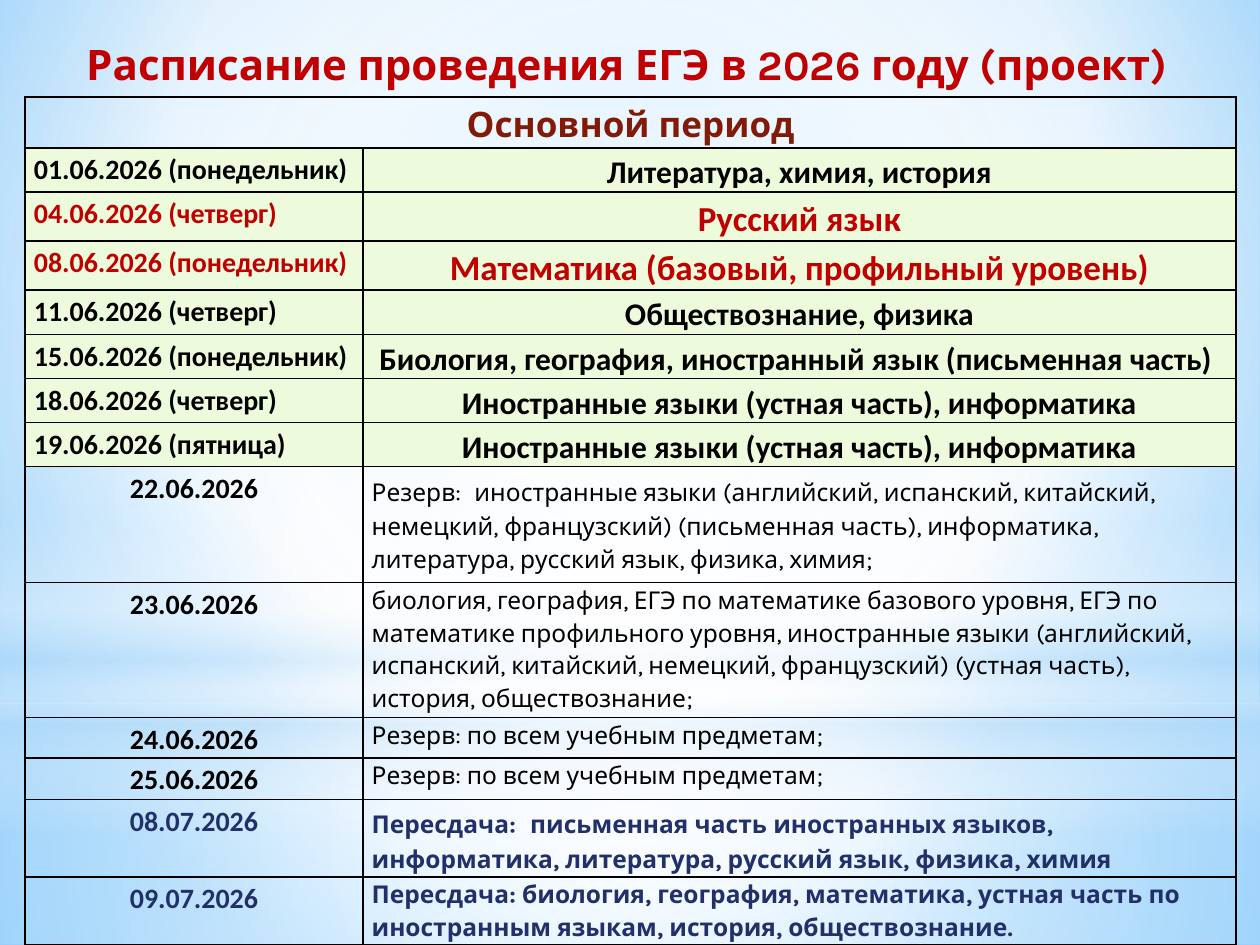
from lxml.etree import SubElement
from pptx import Presentation
from pptx.dml.color import RGBColor
from pptx.enum.shapes import MSO_SHAPE
from pptx.enum.text import MSO_ANCHOR, PP_ALIGN
from pptx.oxml import parse_xml
from pptx.oxml.ns import nsdecls, qn
from pptx.util import Inches, Pt

BLACK = RGBColor(0x00, 0x00, 0x00)
WHITE = RGBColor(0xFF, 0xFF, 0xFF)
RED = RGBColor(0xC0, 0x00, 0x00)
BROWN = RGBColor(0x82, 0x1A, 0x08)
NAVY = RGBColor(0x21, 0x30, 0x6A)
LIME = RGBColor(0xED, 0xFB, 0xDC)
HAZE = RGBColor(0xB4, 0xDC, 0xFA)
SKY = RGBColor(0x9E, 0xD5, 0xFF)
AZURE = RGBColor(0x5B, 0xB9, 0xFF)

RADIAL = '<a:path path="circle"><a:fillToRect l="{}000" t="{}000" r="{}000" b="{}000"/></a:path>'
CENTRED = RADIAL.format(50, 50, 50, 50)
DOWNWARD = '<a:lin ang="5400000" scaled="0"/>'

EXAMS = [
    ("01.06.2026 (понедельник)", "Литература, химия, история", BLACK),
    ("04.06.2026 (четверг)", "Русский язык", RED),
    ("08.06.2026 (понедельник)", "Математика (базовый, профильный уровень)", RED),
    ("11.06.2026 (четверг)", "Обществознание, физика", BLACK),
    ("15.06.2026 (понедельник)", "Биология, география, иностранный язык (письменная часть) ", BLACK),
    ("18.06.2026 (четверг)", "Иностранные языки (устная часть), информатика", BLACK),
    ("19.06.2026 (пятница)", "Иностранные языки (устная часть), информатика", BLACK),
]
RESERVES = [
    ("22.06.2026", [("Резерв: ", 14), (" ", 18), (
        "иностранные языки (английский, испанский, китайский, немецкий, французский) "
        "(письменная часть), информатика, литература, русский язык, физика, химия;", 14)], BLACK),
    ("23.06.2026", [(
        "биология, география, ЕГЭ по математике базового уровня, ЕГЭ по математике профильного "
        "уровня, иностранные языки (английский, испанский, китайский, немецкий, французский) "
        "(устная часть), история, обществознание;", 14)], BLACK),
    ("24.06.2026", [("Резерв: по всем учебным предметам;", 14)], BLACK),
    ("25.06.2026", [("Резерв: по всем учебным предметам;", 14)], BLACK),
    ("08.07.2026", [("Пересдача: ", 14), (" ", 18), (
        "письменная часть иностранных языков, информатика, литература, русский язык, "
        "физика, химия", 14)], NAVY),
    ("09.07.2026", [(
        "Пересдача: биология, география, математика, устная часть по иностранным языкам, "
        "история, обществознание.", 14)], NAVY),
]
ROW_HEIGHTS = [4, 3.5, 3.9, 3.9, 3.5, 3.5, 3.5, 3.5, 9.2, 10.5, 3.2, 3.3, 6, 5.2]


class Board:
    """Slide with its fonts, laid out on a grid of 100 columns by 75 rows."""

    heading_font = "Karla"
    body_font = "Calibri"

    def __init__(self, deck):
        self.slide = deck.slides.add_slide(deck.slide_layouts[6])
        self.column = deck.slide_width / 100
        self.row = deck.slide_height / 75

    def place(self, left, top, width, height):
        return (round(left * self.column), round(top * self.row),
                round(width * self.column), round(height * self.row))

    def gradient(self, owner, stops, direction):
        marks = "".join(
            f'<a:gs pos="{spot}000"><a:srgbClr val="{color}"><a:alpha val="{opacity}000"/>'
            "</a:srgbClr></a:gs>" for spot, color, opacity in stops)
        solid = next(owner.element.iter(qn("a:solidFill")))
        solid.getparent().replace(solid, parse_xml(
            f'<a:gradFill {nsdecls("a")} rotWithShape="1"><a:gsLst>{marks}</a:gsLst>'
            f"{direction}</a:gradFill>"))

    def backdrop(self, stops, direction):
        self.slide.background.fill.solid()
        self.slide.background.fill.fore_color.rgb = WHITE
        self.gradient(self.slide, stops, direction)

    def glow(self, preset, area, stops, direction=CENTRED):
        veil = self.slide.shapes.add_shape(preset, *self.place(*area))
        veil.shadow.inherit = False
        veil.line.fill.background()
        veil.fill.solid()
        veil.fill.fore_color.rgb = WHITE
        self.gradient(veil, stops, direction)

    def add_runs(self, paragraph, runs, font, color, bold=True, align=PP_ALIGN.LEFT):
        paragraph.alignment = align
        for wording, size in runs:
            run = paragraph.add_run()
            run.text = wording
            run.font.name = font
            run.font.size = Pt(size)
            run.font.bold = bold
            run.font.color.rgb = color

    def title(self, area, runs):
        heading = self.slide.shapes.add_textbox(*self.place(*area))
        frame = heading.text_frame
        frame.word_wrap = True
        frame.vertical_anchor = MSO_ANCHOR.MIDDLE
        self.add_runs(frame.paragraphs[0], runs, self.heading_font, RED, align=PP_ALIGN.CENTER)
        for ink in list(heading.element.iter(qn("a:solidFill"))):
            ink.addnext(parse_xml(
                f'<a:effectLst {nsdecls("a")}><a:outerShdw blurRad="38100" dist="38100" '
                'dir="2700000" algn="tl"><a:srgbClr val="000000"><a:alpha val="43000"/>'
                "</a:srgbClr></a:outerShdw></a:effectLst>"))

    def table(self, area, columns, rows):
        grid = self.slide.shapes.add_table(len(rows), len(columns), *self.place(*area)).table
        grid.first_row = grid.horz_banding = False
        for column, width in zip(grid.columns, columns):
            column.width = round(width * self.column)
        for row, height in zip(grid.rows, rows):
            row.height = round(height * self.row)
        for cell in grid.iter_cells():
            self.border(cell)
            cell.fill.background()
        return grid

    def border(self, cell):
        properties = cell._tc.get_or_add_tcPr()
        for side in ("a:lnL", "a:lnR", "a:lnT", "a:lnB"):
            edge = SubElement(properties, qn(side), w=str(Pt(1)))
            ink = SubElement(edge, qn("a:solidFill"))
            SubElement(ink, qn("a:srgbClr"), val=str(BLACK))

    def cell(self, cell, runs, font, color, fill=None, side=0.07, edge=0, **style):
        cell.margin_left = cell.margin_right = Inches(side)
        cell.margin_top = cell.margin_bottom = Inches(edge)
        if fill is not None:
            cell.fill.solid()
            cell.fill.fore_color.rgb = fill
        paragraph = cell.text_frame.paragraphs[0]
        paragraph.line_spacing = 1.15
        self.add_runs(paragraph, runs, font, color, **style)


def main():
    deck = Presentation()
    deck.slide_width, deck.slide_height = Inches(10), Inches(7.5)
    board = Board(deck)
    heading, body = board.heading_font, board.body_font

    board.backdrop([(0, SKY, 100), (60, WHITE, 100), (100, AZURE, 100)],
                   RADIAL.format(20, 10, 20, 60))
    board.glow(MSO_SHAPE.RECTANGLE, (0, 55.8, 100, 19.2),
               [(0, WHITE, 91), (37, WHITE, 76), (100, HAZE, 79)])
    board.glow(MSO_SHAPE.RECTANGLE, (0, 0, 100, 55.8),
               [(0, WHITE, 89), (48, WHITE, 62), (100, HAZE, 79)])
    board.glow(MSO_SHAPE.RECTANGLE, (0, 41.2, 100, 25),
               [(0, WHITE, 0), (29, WHITE, 30), (45, HAZE, 40), (55, WHITE, 26),
                (65, HAZE, 60), (100, WHITE, 0)], DOWNWARD)
    board.glow(MSO_SHAPE.OVAL, (0, 17.5, 100, 55.8), [(0, WHITE, 100), (56, WHITE, 0)])

    board.title((1.2, 1.3, 96.1, 7.1),
                [(" ", 28), ("Расписание проведения ЕГЭ в 2026 году (проект)", 24)])

    schedule = board.table((2, 7.7, 96.1, 67.1), (26.8, 69.3), ROW_HEIGHTS)
    period = schedule.cell(0, 0)
    period.merge(schedule.cell(0, 1))
    period.vertical_anchor = MSO_ANCHOR.MIDDLE
    board.cell(period, [("Основной период", 20)], heading, BROWN,
               side=0.01, edge=0.01, align=PP_ALIGN.CENTER)
    for line, (date, subjects, color) in enumerate(EXAMS, 1):
        size = 20 if color == RED else 18
        board.cell(schedule.cell(line, 0), [(date, 16)], body, color, LIME)
        board.cell(schedule.cell(line, 1), [(subjects, size)], body, color, LIME,
                   align=PP_ALIGN.CENTER)
    for line, (date, subjects, color) in enumerate(RESERVES, len(EXAMS) + 1):
        board.cell(schedule.cell(line, 0), [(date, 16)], body, color, align=PP_ALIGN.CENTER)
        board.cell(schedule.cell(line, 1), subjects, heading, color, bold=color == NAVY)
    deck.save("out.pptx")


if __name__ == "__main__":
    main()
